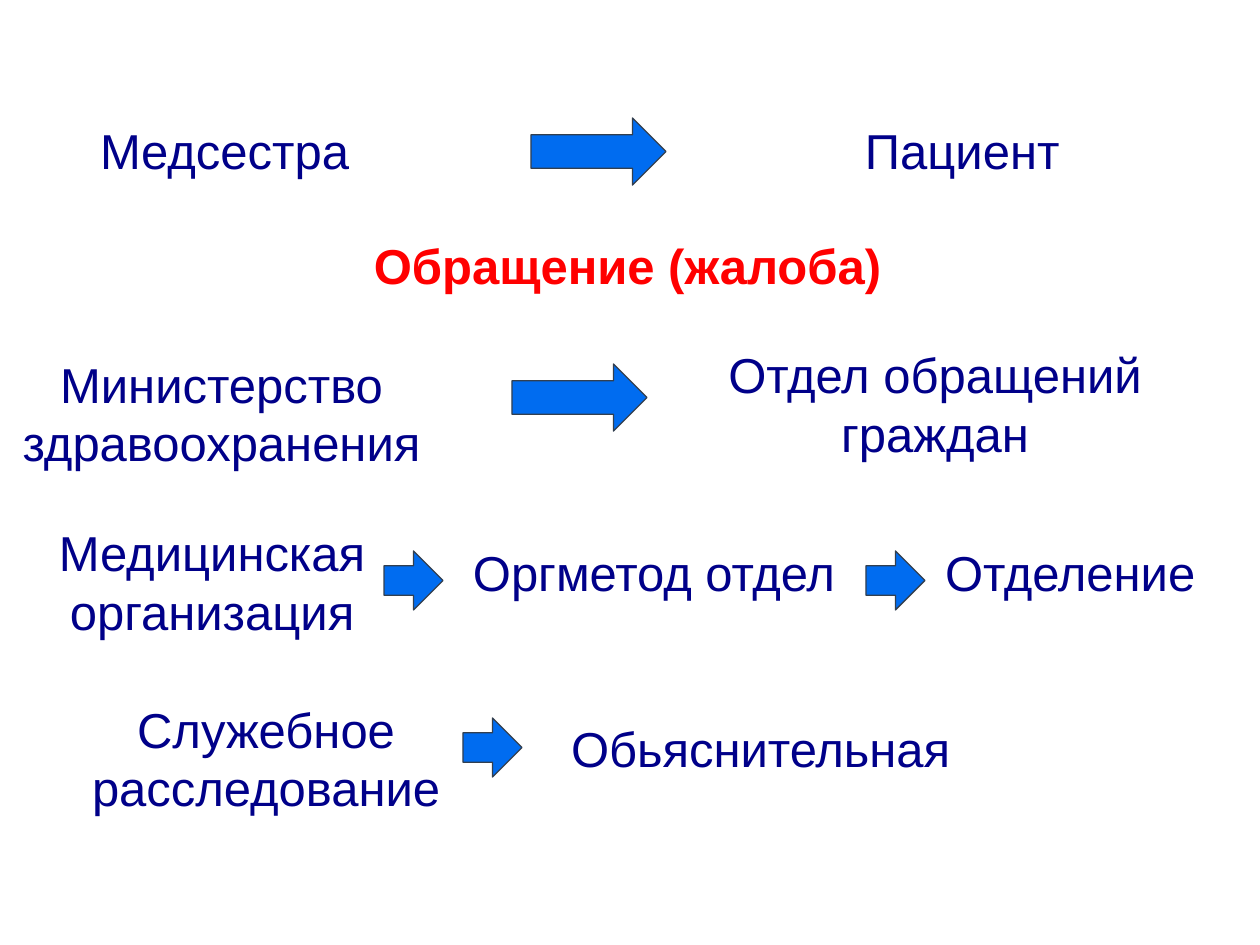
"""Build the slide that traces a patient complaint through the health service."""
from dataclasses import dataclass

from pptx import Presentation
from pptx.dml.color import RGBColor
from pptx.enum.shapes import MSO_SHAPE
from pptx.enum.text import MSO_ANCHOR, PP_ALIGN
from pptx.slide import Slide
from pptx.util import Emu, Pt

PIXELS_PER_INCH = 126
LINE_HEIGHT = 59


@dataclass(frozen=True)
class Theme:
    font: str = "Arial"
    size: Pt = Pt(28)
    line_spacing: Pt = Pt(33.6)
    outline_width: Pt = Pt(0.75)
    text: RGBColor = RGBColor(0x00, 0x00, 0x89)
    alert: RGBColor = RGBColor(0xFF, 0x00, 0x00)
    arrow: RGBColor = RGBColor(0x00, 0x6C, 0xF0)
    outline: RGBColor = RGBColor(0x32, 0x3F, 0x4F)


@dataclass(frozen=True)
class Label:
    text: str
    left: int
    top: int
    width: int
    lines: int = 1
    alert: bool = False


@dataclass(frozen=True)
class Arrow:
    left: int
    top: int
    width: int
    height: int


THEME = Theme()
LONG_ARROW = (135, 67)
SHORT_ARROW = (59, 59)

LABELS = [
    Label("Медсестра", 100, 120, 270),
    Label("Пациент", 865, 120, 306),
    Label("Обращение (жалоба)", 374, 236, 532, alert=True),
    Label("Министерство здравоохранения", 0, 354, 443, lines=2),
    Label("Отдел обращений граждан", 679, 344, 512, lines=2),
    Label("Медицинская организация", 20, 522, 384, lines=2),
    Label("Оргметод отдел", 473, 542, 394),
    Label("Отделение", 945, 542, 295),
    Label("Служебное расследование", 69, 699, 394, lines=2),
    Label("Обьяснительная", 571, 718, 423),
]

ARROWS = [
    Arrow(531, 118, *LONG_ARROW),
    Arrow(512, 364, *LONG_ARROW),
    Arrow(384, 551, *SHORT_ARROW),
    Arrow(866, 551, *SHORT_ARROW),
    Arrow(463, 718, *SHORT_ARROW),
]


def px(length: int) -> Emu:
    """Turn pixels into EMU."""
    return Emu(round(length * 914400 / PIXELS_PER_INCH))


def draw_label(page: Slide, label: Label) -> None:
    """Draw one text label; two-line labels are centred."""
    box = page.shapes.add_textbox(
        px(label.left), px(label.top), px(label.width), px(label.lines * LINE_HEIGHT)
    )
    frame = box.text_frame
    frame.word_wrap = True
    frame.vertical_anchor = MSO_ANCHOR.MIDDLE
    frame.margin_left = frame.margin_right = frame.margin_top = frame.margin_bottom = 0
    frame.text = label.text
    para = frame.paragraphs[0]
    para.alignment = PP_ALIGN.CENTER if label.lines > 1 else PP_ALIGN.LEFT
    para.line_spacing = THEME.line_spacing
    span = para.runs[0]
    span.font.name = THEME.font
    span.font.size = THEME.size
    span.font.bold = label.alert
    span.font.color.rgb = THEME.alert if label.alert else THEME.text


def draw_arrow(page: Slide, arrow: Arrow) -> None:
    """Draw one block arrow pointing right."""
    shape = page.shapes.add_shape(
        MSO_SHAPE.RIGHT_ARROW,
        px(arrow.left), px(arrow.top), px(arrow.width), px(arrow.height),
    )
    shape.shadow.inherit = False
    shape.fill.solid()
    shape.fill.fore_color.rgb = THEME.arrow
    shape.line.color.rgb = THEME.outline
    shape.line.width = THEME.outline_width


def main() -> None:
    """Build and save the deck."""
    deck = Presentation()
    deck.slide_width, deck.slide_height = px(1260), px(945)
    page = deck.slides.add_slide(deck.slide_layouts[6])
    for label in LABELS:
        draw_label(page, label)
    for arrow in ARROWS:
        draw_arrow(page, arrow)
    deck.save("out.pptx")


if __name__ == "__main__":
    main()
